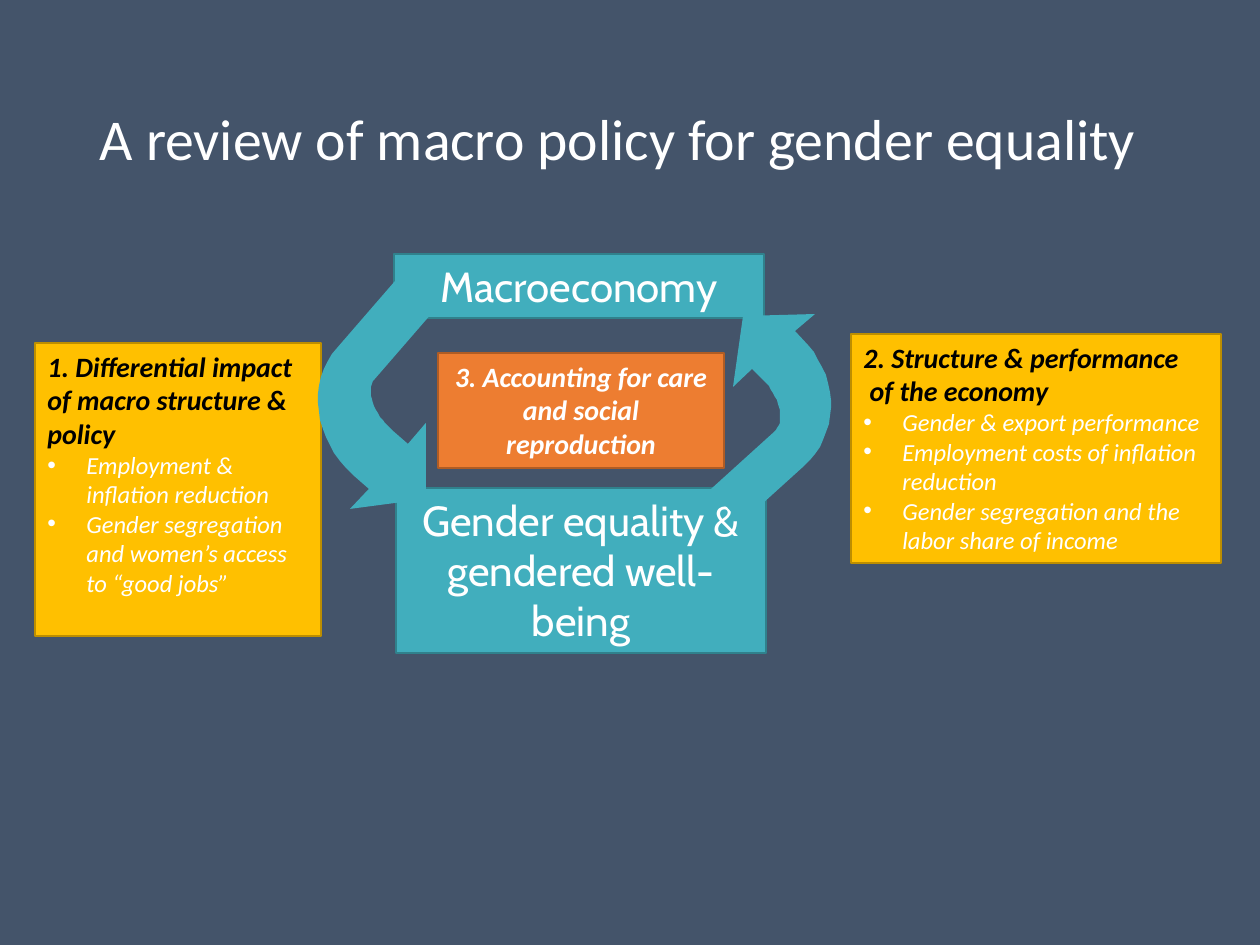
import dataclasses
import typing

import lxml.etree
import pptx
import pptx.dml.color
import pptx.enum.shapes
import pptx.enum.text
import pptx.oxml.ns
import pptx.util

EMU_PER_PX = 914400 / 126
ALIGN = pptx.enum.text.PP_ALIGN
ANCHOR = pptx.enum.text.MSO_ANCHOR
Point = tuple[int, int]


@dataclasses.dataclass(frozen=True)
class Theme:
    background: str = "44546A"
    white: str = "FFFFFF"
    black: str = "000000"
    gold: str = "FFC000"
    gold_edge: str = "BD8E00"
    teal: str = "41AEBD"
    teal_edge: str = "30818C"
    orange: str = "ED7D31"
    orange_edge: str = "AF5C24"
    body_font: str = "Calibri"
    node_font: str = "Cabin"
    title_size: int = 33
    node_size: int = 24
    heading_size: int = 16
    bullet_size: int = 14


THEME = Theme()


@dataclasses.dataclass(frozen=True)
class Box:
    left: int
    top: int
    width: int
    height: int
    fill: str
    edge: str


@dataclasses.dataclass(frozen=True)
class Topic:
    box: Box
    headings: tuple[str, ...]
    bullets: tuple[str, ...] = ()
    color: str = THEME.black
    align: ALIGN = ALIGN.LEFT


@dataclasses.dataclass(frozen=True)
class Node:
    box: Box
    lines: tuple[str, ...]


@dataclasses.dataclass(frozen=True)
class Arrow:
    """Outline whose segments are one point (line) or three points (curve)."""
    start: Point
    segments: tuple[tuple[Point, ...], ...]


TOPICS = (
    Topic(Box(35, 343, 286, 293, THEME.gold, THEME.gold_edge),
          ("1. Differential impact of macro structure & policy",),
          ("Employment & inflation reduction",
           "Gender segregation and women’s access to “good jobs”")),
    Topic(Box(851, 334, 370, 229, THEME.gold, THEME.gold_edge),
          ("2. Structure & performance", " of the economy"),
          ("Gender & export performance",
           "Employment costs of inflation reduction",
           "Gender segregation and the labor share of income")),
)
CARE = Topic(Box(438, 353, 286, 115, THEME.orange, THEME.orange_edge),
             ("3. Accounting for care and social reproduction",),
             color=THEME.white, align=ALIGN.CENTER)
NODES = (
    Node(Box(394, 254, 370, 64, THEME.teal, THEME.teal_edge), ("Macroeconomy",)),
    Node(Box(396, 488, 370, 165, THEME.teal, THEME.teal_edge),
         ("Gender equality &", "gendered well-being")),
)
ARROWS = (
    Arrow((426, 499), (
        ((350, 509),), ((369, 489),), ((353, 475),),
        ((314, 440), (306, 383), (338, 347)),
        ((396, 280),), ((433, 312),), ((375, 379),),
        ((365, 391), (373, 413), (392, 430)),
        ((408, 444),), ((426, 423),))),
    Arrow((743, 316), (
        ((815, 314),), ((795, 331),), ((808, 345),),
        ((840, 382), (838, 436), (804, 466)),
        ((741, 523),), ((711, 489),), ((774, 432),),
        ((785, 422), (781, 401), (766, 383)),
        ((752, 369),), ((733, 387),))),
)


def px(n: int) -> pptx.util.Emu:
    return pptx.util.Emu(round(n * EMU_PER_PX))


def rgb(color: str) -> pptx.dml.color.RGBColor:
    return pptx.dml.color.RGBColor.from_string(color)


def add_text(tf, text: str, *, size: int, color: str, font: str = THEME.body_font,
             bold: bool = False, italic: bool = False, align: ALIGN = ALIGN.LEFT,
             bullet: bool = False, spacing: float = 1.0) -> None:
    """Fill the first paragraph if it is still empty, otherwise append one."""
    p = tf.paragraphs[0] if not tf.text else tf.add_paragraph()
    p.alignment = align
    p.line_spacing = spacing
    if bullet:
        ppr = p._p.get_or_add_pPr()
        ppr.set("marL", str(px(39)))
        ppr.set("indent", str(-px(39)))
        for tag, key, value in (("a:buFont", "typeface", "Arial"),
                                ("a:buChar", "char", "•")):
            lxml.etree.SubElement(ppr, pptx.oxml.ns.qn(tag)).set(key, value)
    r = p.add_run()
    r.text = text
    r.font.name, r.font.size = font, pptx.util.Pt(size)
    r.font.bold, r.font.italic = bold, italic
    r.font.color.rgb = rgb(color)


def add_box(s, box: Box):
    """Draw the rectangle and return its text frame."""
    sp = s.shapes.add_shape(pptx.enum.shapes.MSO_SHAPE.RECTANGLE, px(box.left),
                            px(box.top), px(box.width), px(box.height))
    sp.shadow.inherit = False
    sp.fill.solid()
    sp.fill.fore_color.rgb = rgb(box.fill)
    sp.line.color.rgb = rgb(box.edge)
    sp.line.width = pptx.util.Pt(1)
    tf = sp.text_frame
    tf.word_wrap = True
    tf.vertical_anchor = ANCHOR.TOP
    return tf


def add_topic(s, topic: Topic) -> None:
    tf = add_box(s, topic.box)
    for heading in topic.headings:
        add_text(tf, heading, size=THEME.heading_size, color=topic.color,
                 bold=True, italic=True, align=topic.align)
    for item in topic.bullets:
        add_text(tf, item, size=THEME.bullet_size, color=THEME.white,
                 italic=True, bullet=True)


def add_node(s, node: Node) -> None:
    tf = add_box(s, node.box)
    for line in node.lines:
        add_text(tf, line, size=THEME.node_size, color=THEME.white,
                 font=THEME.node_font, align=ALIGN.CENTER)


def curve(a: Point, b: Point, c: Point, d: Point,
          steps: int = 16) -> typing.Iterator[tuple[float, float]]:
    """Yield points along a cubic Bezier curve, without its start."""
    for i in range(1, steps + 1):
        t = i / steps
        u = 1 - t
        weights = (u ** 3, 3 * u * u * t, 3 * u * t * t, t ** 3)
        yield tuple(sum(w * v for w, v in zip(weights, axis))
                    for axis in zip(a, b, c, d))


def add_arrow(s, arrow: Arrow) -> None:
    points, last = [], arrow.start
    for segment in arrow.segments:
        points += curve(last, *segment) if len(segment) == 3 else segment
        last = segment[-1]
    builder = s.shapes.build_freeform(*arrow.start, scale=EMU_PER_PX)
    builder.add_line_segments(points, close=True)
    sp = builder.convert_to_shape()
    sp.shadow.inherit = False
    sp.fill.solid()
    sp.fill.fore_color.rgb = rgb(THEME.teal)
    sp.line.fill.background()


def main() -> None:
    prs = pptx.Presentation()
    prs.slide_width, prs.slide_height = px(1260), px(945)
    s = prs.slides.add_slide(prs.slide_layouts.get_by_name("Title Only"))
    s.background.fill.solid()
    s.background.fill.fore_color.rgb = rgb(THEME.background)

    title = s.shapes.title
    title.left, title.top, title.width, title.height = map(px, (87, 50, 1086, 183))
    title.text_frame.vertical_anchor = ANCHOR.MIDDLE
    add_text(title.text_frame, "A review of macro policy for gender equality",
             size=THEME.title_size, color=THEME.white, spacing=0.9)

    for topic in TOPICS:
        add_topic(s, topic)
    for node in NODES:
        add_node(s, node)
    for arrow in ARROWS:
        add_arrow(s, arrow)
    add_topic(s, CARE)
    prs.save("out.pptx")


if __name__ == "__main__":
    main()
